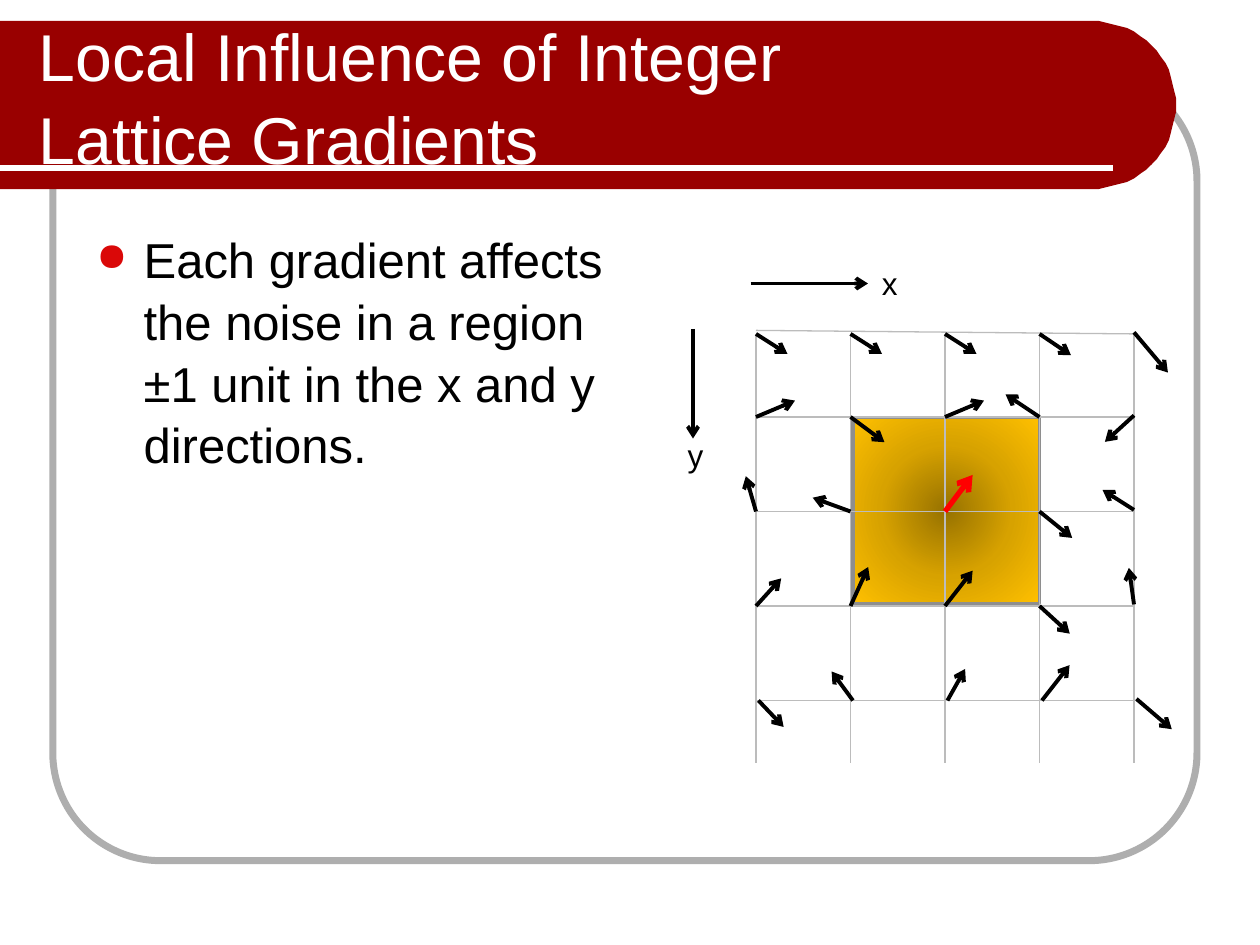
import math

import pptx
import pptx.dml.color
import pptx.enum.shapes
import pptx.enum.text
import pptx.oxml
import pptx.oxml.ns
import pptx.util

Pt = pptx.util.Pt
SHAPES = pptx.enum.shapes.MSO_SHAPE

# Content
TITLE = "Local Influence of Integer Lattice Gradients"
BODY = "Each gradient affects the noise in a region ±1 unit in the x and y directions."
FONT = "Arial"
COLORS = {
    "banner": "990000", "frame": "AEAEAE", "white": "FFFFFF", "black": "000000",
    "bullet": "DA0808", "grid": "BCBCBC", "region_edge": "8E8E8E", "red": "FF0000",
}
REGION_STOPS = [(0, "977200"), (50, "D7A200"), (100, "FFC000")]

# Lattice: each row lists the gradient (dx, dy) at its five nodes
CELL = 54
COLUMN_X = [432 + CELL * i for i in range(5)]
ROW_Y = [190.8] + [238.3 + CELL * i for i in range(4)]
GRADIENTS = [
    [(18, 11.5), (18, 11.5), (18, 11.5), (18, 12.2), (19.4, 23)],
    [(22.3, -9.4), (19.4, 14.4), (22.3, -9.4), (-19.4, -13), (-16.6, 15.1)],
    [(-5.8, -20.2), (-21.6, -7.9), (15.8, -20.9), (18.7, 15.1), (-18, -11.5)],
    [(14.4, -15.8), (10.1, -22.3), (15.8, -20.2), (17.3, 15.8), (-2.9, -20.9)],
    [(14.4, 15.1), (-12.2, -16.6), (10.1, -18), (15.8, -20.2), (20.2, 17.3)],
]
CENTER_NODE = (2, 2)
AXES = [  # label, label box, arrow start, arrow end
    ("x", (496.8, 147.6, 43.9, 28.8), (429, 162), (496, 162)),
    ("y", (385.9, 245.5, 36, 29.5), (396, 188), (396, 250.6)),
]

deck = pptx.Presentation()
deck.slide_width, deck.slide_height = Pt(720), Pt(540)
slide = deck.slides.add_slide(deck.slide_layouts[6])


def rgb(name):
    return pptx.dml.color.RGBColor.from_string(COLORS[name])


def add_line(start, end, color, width, arrow=False):
    line = slide.shapes.add_connector(
        pptx.enum.shapes.MSO_CONNECTOR.STRAIGHT, *(Pt(v) for v in (*start, *end)))
    line.line.color.rgb = rgb(color)
    line.line.width = Pt(width)
    if arrow:
        pptx.oxml.ns.qn("a:tailEnd")
        head = line.line._get_or_add_ln().makeelement(
            pptx.oxml.ns.qn("a:tailEnd"), {"type": "arrow"})
        line.line._get_or_add_ln().append(head)
    properties = line._element.spPr
    properties.append(properties.makeelement(pptx.oxml.ns.qn("a:effectLst"), {}))


def add_text(text, box, size, color):
    frame = slide.shapes.add_textbox(*(Pt(v) for v in box)).text_frame
    frame.word_wrap = True
    frame.text = text
    font = frame.paragraphs[0].runs[0].font
    font.name, font.size, font.color.rgb = FONT, Pt(size), rgb(color)
    return frame


# Rounded frame behind the banner
frame = slide.shapes.add_shape(
    SHAPES.ROUNDED_RECTANGLE, Pt(30.2), Pt(41.8), Pt(653.8), Pt(450))
frame.adjustments[0] = 0.137
frame.shadow.inherit = False
frame.fill.background()
frame.line.color.rgb = rgb("frame")
frame.line.width = Pt(4)

# Banner with a half-round right end, and its rule
RADIUS, ARC_X, ARC_Y = 48, 624, 60
arc = [(ARC_X + RADIUS * math.sin(math.radians(a)),
        ARC_Y - RADIUS * math.cos(math.radians(a))) for a in range(0, 181, 5)]
outline = slide.shapes.build_freeform(0, ARC_Y - RADIUS, scale=Pt(1))
outline.add_line_segments(arc + [(0, ARC_Y + RADIUS)], close=True)
banner = outline.convert_to_shape()
banner.shadow.inherit = False
banner.fill.solid()
banner.fill.fore_color.rgb = rgb("banner")
banner.line.fill.background()
add_line((0, 96), (636, 96), "white", 3)

# Region influenced by the center gradient
region = slide.shapes.add_shape(
    SHAPES.RECTANGLE, Pt(487.5), Pt(238.5), Pt(106.5), Pt(106.5))
region.shadow.inherit = False
region.line.color.rgb = rgb("region_edge")
region.line.width = Pt(2)
stops = "".join(f'<a:gs pos="{pos * 1000}"><a:srgbClr val="{color}"/></a:gs>'
                for pos, color in REGION_STOPS)
region._element.spPr.find(pptx.oxml.ns.qn("a:prstGeom")).addnext(pptx.oxml.parse_xml(
    f'<a:gradFill {pptx.oxml.ns.nsdecls("a")}><a:gsLst>{stops}</a:gsLst>'
    '<a:path path="circle"><a:fillToRect l="50000" t="50000" r="50000" b="50000"/>'
    '</a:path></a:gradFill>'))

# Title
title = add_text(TITLE, (15.1, 18, 560.9, 72), 37.8, "white")
title.vertical_anchor = pptx.enum.text.MSO_ANCHOR.MIDDLE
title.margin_right = Pt(18)
title.paragraphs[0].line_spacing = 1.05

# Bulleted statement
statement = add_text(BODY, (48, 126, 306, 348), 28, "black").paragraphs[0]
statement.line_spacing = 1.05
indents = statement._p.get_or_add_pPr()
indents.set("marL", str(Pt(27)))
indents.set("indent", str(-Pt(27)))
for xml in (f'<a:buClr {{}}><a:srgbClr val="{COLORS["bullet"]}"/></a:buClr>',
            '<a:buSzPct {} val="80000"/>', '<a:buChar {} char="●"/>'):
    indents.append(pptx.oxml.parse_xml(xml.format(pptx.oxml.ns.nsdecls("a"))))

# Lattice lines; the top one slopes slightly
for x in COLUMN_X:
    add_line((x, ROW_Y[0]), (x, 436.3), "grid", 0.75)
for y in ROW_Y:
    top = y == ROW_Y[0]
    add_line((COLUMN_X[0], y - 2 if top else y), (COLUMN_X[-1], y), "grid", 0.75)

# Gradient arrows; the bottom row and right column sit slightly off the nodes
for row, gradients in enumerate(GRADIENTS):
    for column, (dx, dy) in enumerate(gradients):
        x = COLUMN_X[column] + (1.4 if row == 4 else 0)
        y = ROW_Y[row] - (0.9 if column == 4 else 0)
        center = (row, column) == CENTER_NODE
        add_line((x, y), (x + dx, y + dy), "red" if center else "black",
                 3 if center else 2.25, arrow=True)

# Axes
for label, box, start, end in AXES:
    add_line(start, end, "black", 2.25, arrow=True)
    add_text(label, box, 18, "black").auto_size = (
        pptx.enum.text.MSO_AUTO_SIZE.SHAPE_TO_FIT_TEXT)

deck.save("out.pptx")
